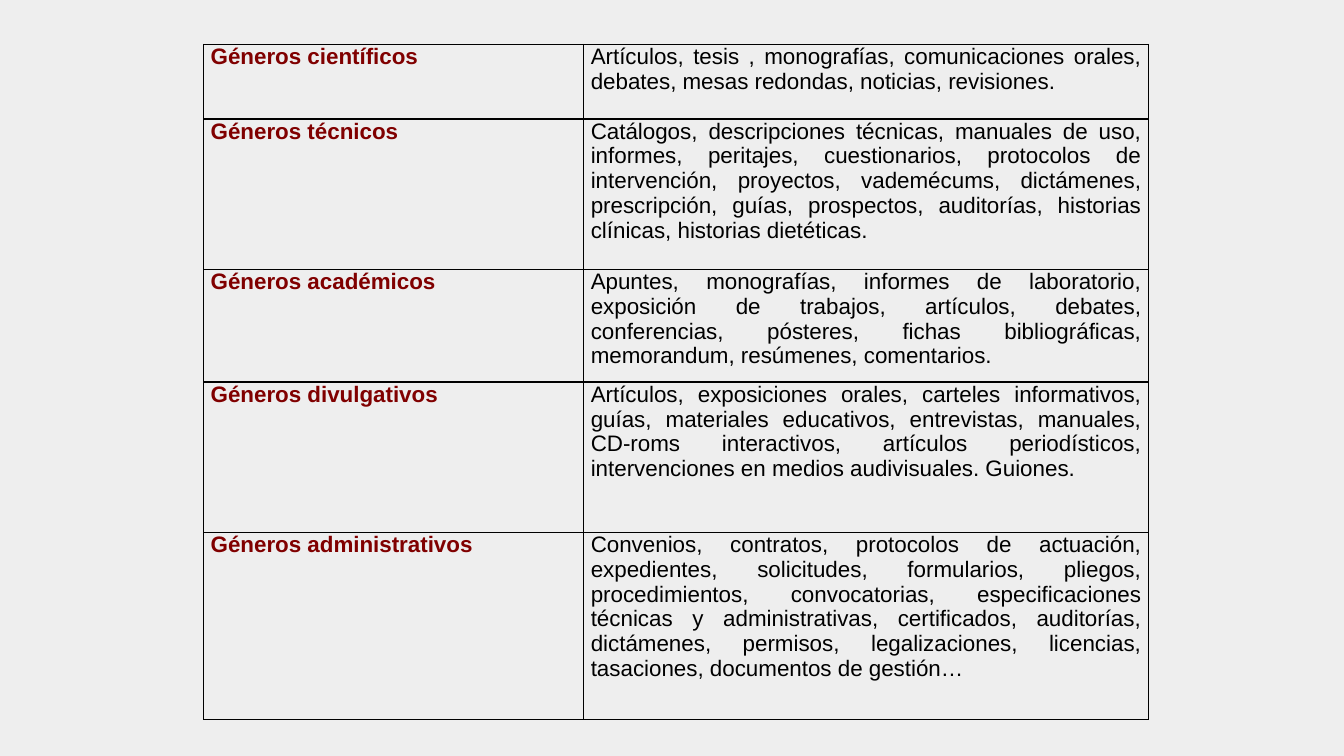
from dataclasses import dataclass

from lxml.etree import SubElement
from pptx import Presentation
from pptx.dml.color import RGBColor
from pptx.enum.text import PP_ALIGN
from pptx.oxml.ns import qn
from pptx.util import Inches, Pt


@dataclass(frozen=True)
class Theme:
    background: str = "EEEEEE"
    heading: str = "800000"
    body: str = "000000"
    border: str = "000000"
    font: str = "Arial"
    text_size: int = 16
    border_width: int = 1


GENRES = [
    (0.74, "Géneros científicos",
     "Artículos, tesis , monografías, comunicaciones orales, debates, "
     "mesas redondas, noticias, revisiones."),
    (1.49, "Géneros técnicos",
     "Catálogos, descripciones técnicas, manuales de uso, informes, peritajes, "
     "cuestionarios, protocolos de intervención, proyectos, vademécums, "
     "dictámenes, prescripción, guías, prospectos, auditorías, "
     "historias clínicas, historias dietéticas."),
    (1.12, "Géneros académicos",
     "Apuntes, monografías, informes de laboratorio, exposición de trabajos, "
     "artículos, debates, conferencias, pósteres, fichas bibliográficas, "
     "memorandum, resúmenes, comentarios."),
    (1.49, "Géneros divulgativos",
     "Artículos, exposiciones orales, carteles informativos, guías, "
     "materiales educativos, entrevistas, manuales, CD-roms interactivos, "
     "artículos periodísticos, intervenciones en medios audivisuales. Guiones."),
    (1.86, "Géneros administrativos",
     "Convenios, contratos, protocolos de actuación, expedientes, solicitudes, "
     "formularios, pliegos, procedimientos, convocatorias, especificaciones "
     "técnicas y administrativas, certificados, auditorías, dictámenes, "
     "permisos, legalizaciones, licencias, tasaciones, documentos de gestión…"),
]


class SlideBuilder:
    def __init__(self, slide, theme):
        self.slide = slide
        self.theme = theme

    def background(self):
        fill = self.slide.background.fill
        fill.solid()
        fill.fore_color.rgb = RGBColor.from_string(self.theme.background)

    def borders(self, cell):
        properties = cell._tc.get_or_add_tcPr()
        for side in ("lnL", "lnR", "lnT", "lnB"):
            line = SubElement(properties, qn(f"a:{side}"),
                              w=str(Pt(self.theme.border_width)))
            solid = SubElement(line, qn("a:solidFill"))
            SubElement(solid, qn("a:srgbClr"), val=self.theme.border)

    def cell(self, cell, text, color, bold):
        cell.margin_left = cell.margin_right = Inches(0.07)
        cell.margin_top = cell.margin_bottom = Inches(0)
        self.borders(cell)
        cell.fill.background()
        paragraph = cell.text_frame.paragraphs[0]
        paragraph.alignment = PP_ALIGN.JUSTIFY
        run = paragraph.add_run()
        run.text = text
        run.font.name = self.theme.font
        run.font.size = Pt(self.theme.text_size)
        run.font.bold = bold
        run.font.color.rgb = RGBColor.from_string(color)

    def genre_table(self, left, top, widths, genres):
        height = sum(row_height for row_height, _, _ in genres)
        table = self.slide.shapes.add_table(
            len(genres), len(widths), Inches(left), Inches(top),
            Inches(sum(widths)), Inches(height)).table
        table.first_row = table.horz_banding = False
        for column, width in zip(table.columns, widths):
            column.width = Inches(width)
        for row, (row_height, genre, examples) in zip(table.rows, genres):
            row.height = Inches(row_height)
            self.cell(row.cells[0], genre, self.theme.heading, True)
            self.cell(row.cells[1], examples, self.theme.body, False)


def main():
    presentation = Presentation()
    presentation.slide_width = Inches(13.33)
    presentation.slide_height = Inches(7.5)
    slide = presentation.slides.add_slide(presentation.slide_layouts[6])
    builder = SlideBuilder(slide, Theme())
    builder.background()
    builder.genre_table(2.02, 0.44, (3.77, 5.6), GENRES)
    presentation.save("out.pptx")


if __name__ == "__main__":
    main()
